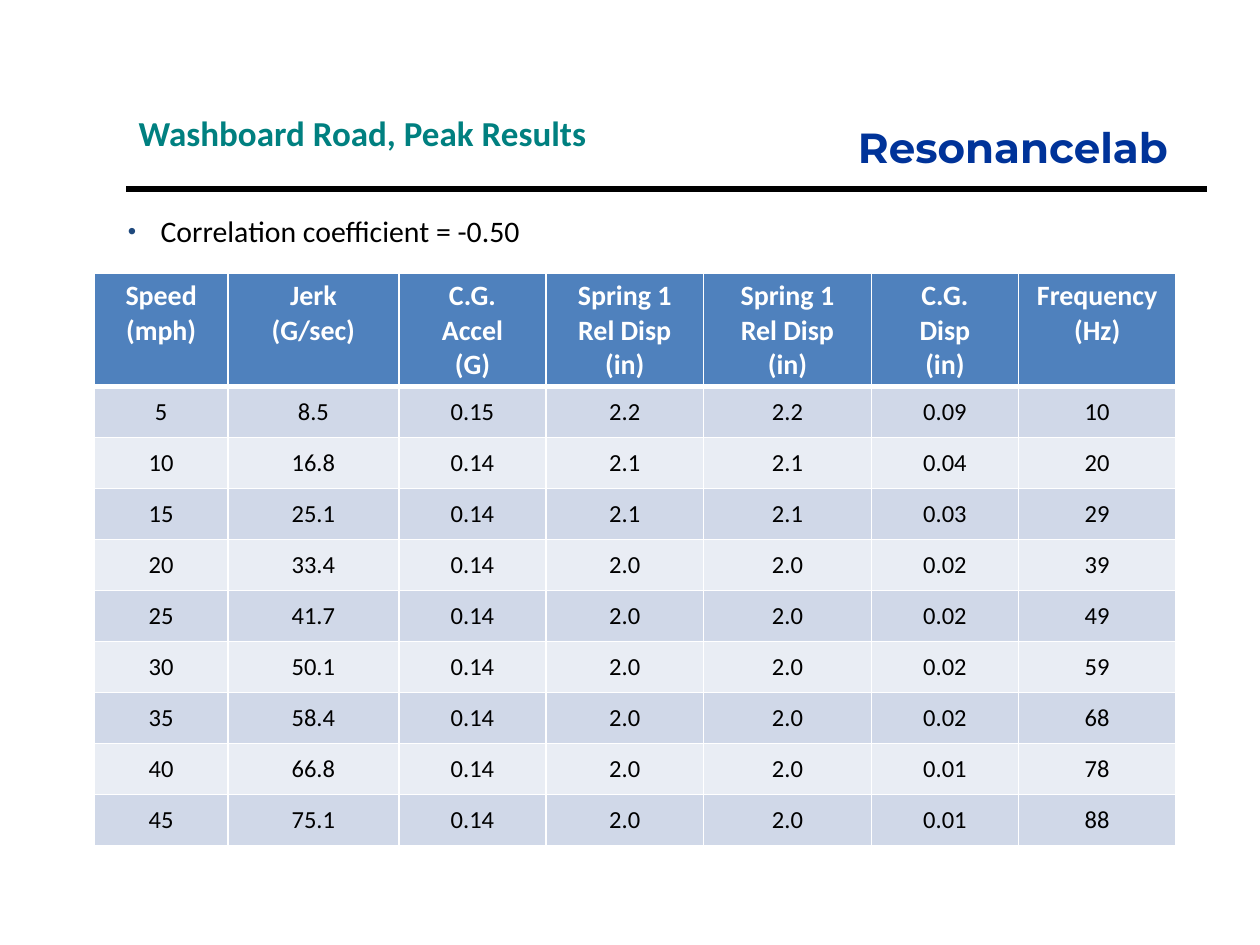
from pptx import Presentation
from pptx.util import Inches, Pt
from pptx.dml.color import RGBColor
from pptx.enum.shapes import MSO_CONNECTOR
from pptx.enum.text import MSO_ANCHOR, MSO_AUTO_SIZE, PP_ALIGN
from pptx.oxml.ns import qn
from lxml.etree import SubElement

WHITE = RGBColor(0xFF, 0xFF, 0xFF)
BLACK = RGBColor(0, 0, 0)
TEAL = RGBColor(0, 0x80, 0x80)
NAVY = RGBColor(0, 0x33, 0x99)
SLATE = RGBColor(0x1F, 0x49, 0x7D)
HEAD = RGBColor(0x4F, 0x81, 0xBD)
BANDS = (RGBColor(0xD0, 0xD8, 0xE8), RGBColor(0xE9, 0xED, 0xF4))

LABELS = ["Speed\n(mph)", "Jerk\n(G/sec)", "C.G.\nAccel\n(G)",
          "Spring 1\nRel Disp\n(in)", "Spring 1\nRel Disp\n(in)",
          "C.G.\nDisp\n(in)", "Frequency\n(Hz)"]
PEAKS = """5 8.5 0.15 2.2 2.2 0.09 10
10 16.8 0.14 2.1 2.1 0.04 20
15 25.1 0.14 2.1 2.1 0.03 29
20 33.4 0.14 2.0 2.0 0.02 39
25 41.7 0.14 2.0 2.0 0.02 49
30 50.1 0.14 2.0 2.0 0.02 59
35 58.4 0.14 2.0 2.0 0.02 68
40 66.8 0.14 2.0 2.0 0.01 78
45 75.1 0.14 2.0 2.0 0.01 88"""
WIDTHS = [12.7, 16.3, 14, 15, 16, 14, 15]


def grid(*cells):
    return [Inches(cell / 12) for cell in cells]


class Deck:
    font = "Calibri"

    def __init__(self):
        self.prs = Presentation()
        self.prs.slide_width, self.prs.slide_height = grid(120, 90)
        self.slide = self.prs.slides.add_slide(self.prs.slide_layouts[5])

    def label(self, frame, text, size, color, bold=False,
              align=PP_ALIGN.LEFT, font=None):
        frame.text = text
        for para in frame.paragraphs:
            para.alignment = align
            for run in para.runs:
                run.font.name = font or self.font
                run.font.size = Pt(size)
                run.font.bold = bold
                run.font.color.rgb = color

    def title(self, box, text):
        shape = self.slide.shapes.title
        shape.left, shape.top, shape.width, shape.height = grid(*box)
        frame = shape.text_frame
        frame.vertical_anchor = MSO_ANCHOR.TOP
        frame.auto_size = MSO_AUTO_SIZE.NONE
        self.label(frame, text, 20, TEAL, True)

    def text(self, box, text, size, color, **look):
        frame = self.slide.shapes.add_textbox(*grid(*box)).text_frame
        frame.word_wrap = True
        self.label(frame, text, size, color, **look)
        return frame

    def bullet(self, box, text):
        frame = self.text(box, text, 17, BLACK)
        props = frame.paragraphs[0]._p.get_or_add_pPr()
        indent = Inches(0.26)
        props.set("marL", str(indent))
        props.set("indent", str(-indent))
        tint = SubElement(props, qn("a:buClr"))
        SubElement(tint, qn("a:srgbClr"), val=str(SLATE))
        SubElement(props, qn("a:buSzPct"), val="80000")
        SubElement(props, qn("a:buFont"), typeface="Arial")
        SubElement(props, qn("a:buChar"), char="•")

    def rule(self, left, right, row):
        line = self.slide.shapes.add_connector(
            MSO_CONNECTOR.STRAIGHT, *grid(left, row, right, row))
        line.line.color.rgb = BLACK
        line.line.width = Pt(3)
        SubElement(line._element.spPr, qn("a:effectLst"))

    def border(self, cell, **weights):
        props = cell._tc.get_or_add_tcPr()
        for side in "LRTB":
            edge = SubElement(props, qn("a:ln" + side),
                              w=str(Pt(weights.get(side, 1))))
            fill = SubElement(edge, qn("a:solidFill"))
            SubElement(fill, qn("a:srgbClr"), val=str(WHITE))

    def table(self, left, top, widths, heights, rows):
        table = self.slide.shapes.add_table(
            len(rows), len(widths),
            *grid(left, top, sum(widths), sum(heights))).table
        for col, width in zip(table.columns, grid(*widths)):
            col.width = width
        for row, height in zip(table.rows, grid(*heights)):
            row.height = height
        for r, row in enumerate(rows):
            for c, value in enumerate(row):
                self.cell(table.cell(r, c), value, r)

    def cell(self, cell, value, row):
        head = row == 0
        self.border(cell, T=3 if row == 1 else 1, B=3 if head else 1)
        cell.fill.solid()
        cell.fill.fore_color.rgb = HEAD if head else BANDS[(row - 1) % 2]
        if not head:
            cell.vertical_anchor = MSO_ANCHOR.MIDDLE
            cell.margin_left = cell.margin_right = Inches(0.01)
            cell.margin_top, cell.margin_bottom = Inches(0.01), 0
        self.label(cell.text_frame, value, 16 if head else 14,
                   WHITE if head else BLACK, head, PP_ALIGN.CENTER)


def main():
    deck = Deck()
    rows = [LABELS] + [line.split() for line in PEAKS.splitlines()]
    deck.title((12, 10, 58, 5.3), "Washboard Road, Peak Results")
    deck.text((72, 11, 40.4, 6), "Resonancelab", 24, NAVY, bold=True,
              align=PP_ALIGN.RIGHT, font="Montserrat")
    deck.rule(12, 115, 18)
    deck.table(9, 26, WIDTHS, [10.8] + [4.86] * (len(rows) - 1), rows)
    deck.bullet((11, 19.7, 98, 4.5), "Correlation coefficient = -0.50")
    deck.prs.save("out.pptx")


if __name__ == "__main__":
    main()
